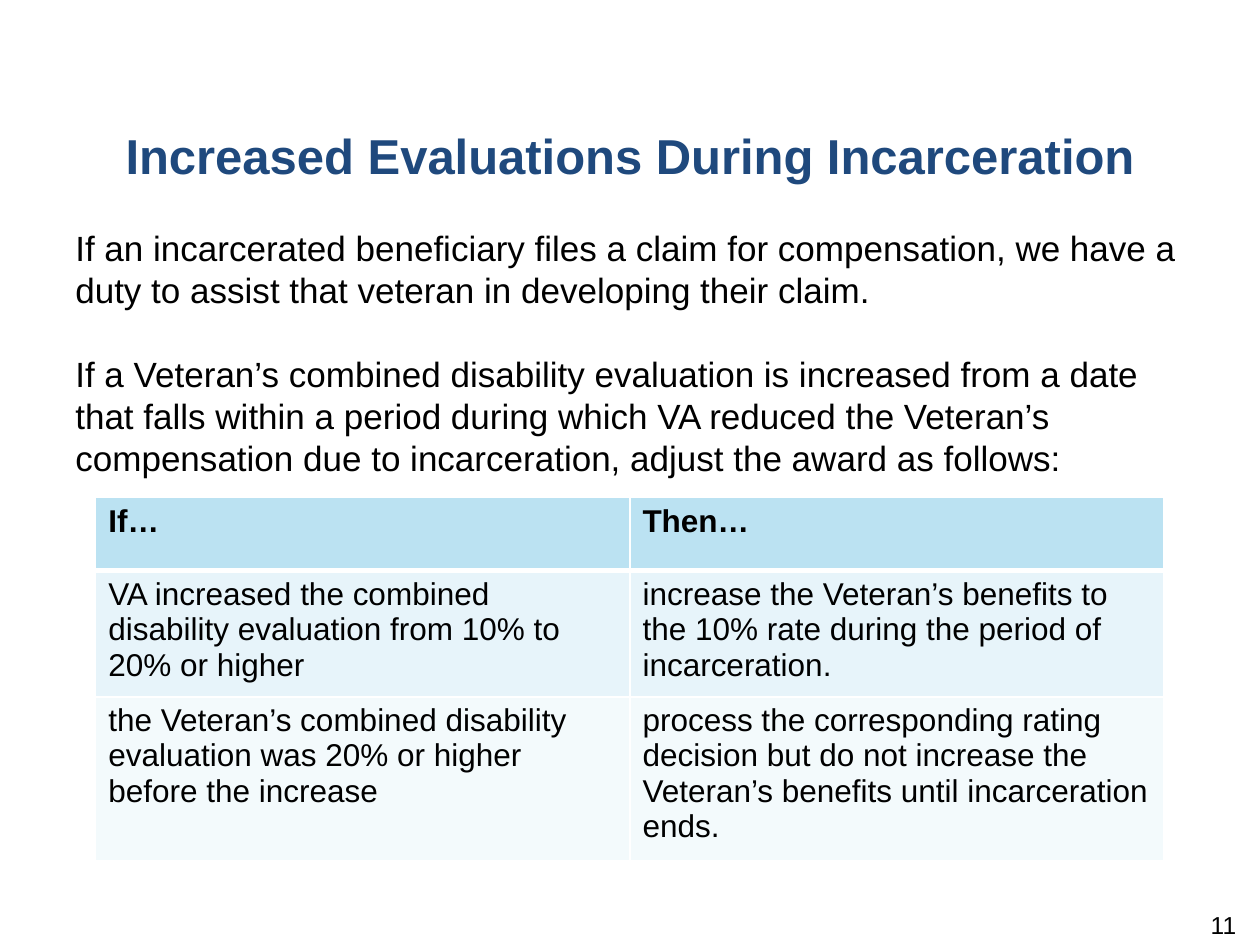
from dataclasses import dataclass

from lxml import etree
from pptx import Presentation
from pptx.dml.color import RGBColor
from pptx.enum import text
from pptx.oxml import ns
from pptx.util import Inches, Pt


@dataclass(frozen=True)
class Theme:
    font: str = "Arial"
    ink: str = "000000"
    heading: str = "1F497D"
    border: str = "FFFFFF"
    row_fills: tuple = ("BBE2F2", "E7F4FA", "F3FAFC")
    title_size: int = 28
    body_size: int = 20
    table_size: int = 18
    number_size: int = 14


THEME = Theme()

PARAGRAPHS = [
    "If an incarcerated beneficiary files a claim for compensation, we have a "
    "duty to assist that veteran in developing their claim.",
    "If a Veteran’s combined disability evaluation is increased from a date "
    "that falls within a period during which VA reduced the Veteran’s "
    "compensation due to incarceration, adjust the award as follows:",
]

AWARD_RULES = [
    ("If…", "Then…"),
    ("VA increased the combined disability evaluation from 10% to 20% or higher",
     "increase the Veteran’s benefits to the 10% rate during the period of "
     "incarceration."),
    ("the Veteran’s combined disability evaluation was 20% or higher before "
     "the increase",
     "process the corresponding rating decision but do not increase the "
     "Veteran’s benefits until incarceration ends."),
]


def write(para, words, size, color=THEME.ink, bold=False, align=None,
          before=0, after=0, line=None):
    span = para.add_run()
    span.text = words
    span.font.name = THEME.font
    span.font.size = Pt(size)
    span.font.bold = bold
    span.font.color.rgb = RGBColor.from_string(color)
    para.alignment = align
    para.space_before = Pt(before)
    para.space_after = Pt(after)
    if line:
        para.line_spacing = Pt(line)


def add_box(page, left, top, width, height, anchor=text.MSO_ANCHOR.TOP):
    box = page.shapes.add_textbox(
        Inches(left), Inches(top), Inches(width), Inches(height))
    frame = box.text_frame
    frame.word_wrap = True
    frame.vertical_anchor = anchor
    return frame


def add_title(page):
    frame = add_box(page, 0, 0.87, 10, 0.72, text.MSO_ANCHOR.MIDDLE)
    write(frame.paragraphs[0], "Increased Evaluations During Incarceration",
          THEME.title_size, color=THEME.heading, bold=True,
          align=text.PP_ALIGN.CENTER, after=6)


def add_body(page):
    frame = add_box(page, 0.5, 1.75, 9, 5.32)
    for index, words in enumerate(PARAGRAPHS):
        para = frame.add_paragraph() if index else frame.paragraphs[0]
        write(para, words, THEME.body_size, before=24 if index else 0, line=24)


def add_page_number(page):
    frame = add_box(page, 7.58, 7.22, 2.33, 0.4)
    frame.margin_top = 0
    write(frame.paragraphs[0], "11", THEME.number_size,
          align=text.PP_ALIGN.RIGHT, after=6)


def set_border(cell, side, width):
    properties = cell._tc.get_or_add_tcPr()
    line = etree.SubElement(properties, ns.qn(f"a:ln{side}"), w=str(Pt(width)))
    fill = etree.SubElement(line, ns.qn("a:solidFill"))
    etree.SubElement(fill, ns.qn("a:srgbClr"), val=THEME.border)


def add_award_table(page):
    heights = (0.58, 0.94, 1.23)
    table = page.shapes.add_table(
        len(AWARD_RULES), 2, Inches(0.76), Inches(3.95),
        Inches(8.48), Inches(sum(heights))).table
    for row, height in zip(table.rows, heights):
        row.height = Inches(height)
    for row, values in enumerate(AWARD_RULES):
        for column, words in enumerate(values):
            cell = table.cell(row, column)
            widths = {"L": 1, "R": 1, "T": 3 if row == 1 else 1,
                      "B": 3 if row == 0 else 1}
            for side, width in widths.items():
                set_border(cell, side, width)
            cell.fill.solid()
            cell.fill.fore_color.rgb = RGBColor.from_string(THEME.row_fills[row])
            write(cell.text_frame.paragraphs[0], words, THEME.table_size,
                  bold=row == 0)


def main():
    deck = Presentation()
    deck.slide_width, deck.slide_height = Inches(10), Inches(7.5)
    page = deck.slides.add_slide(deck.slide_layouts[6])
    add_title(page)
    add_body(page)
    add_page_number(page)
    add_award_table(page)
    deck.save("out.pptx")


if __name__ == "__main__":
    main()
